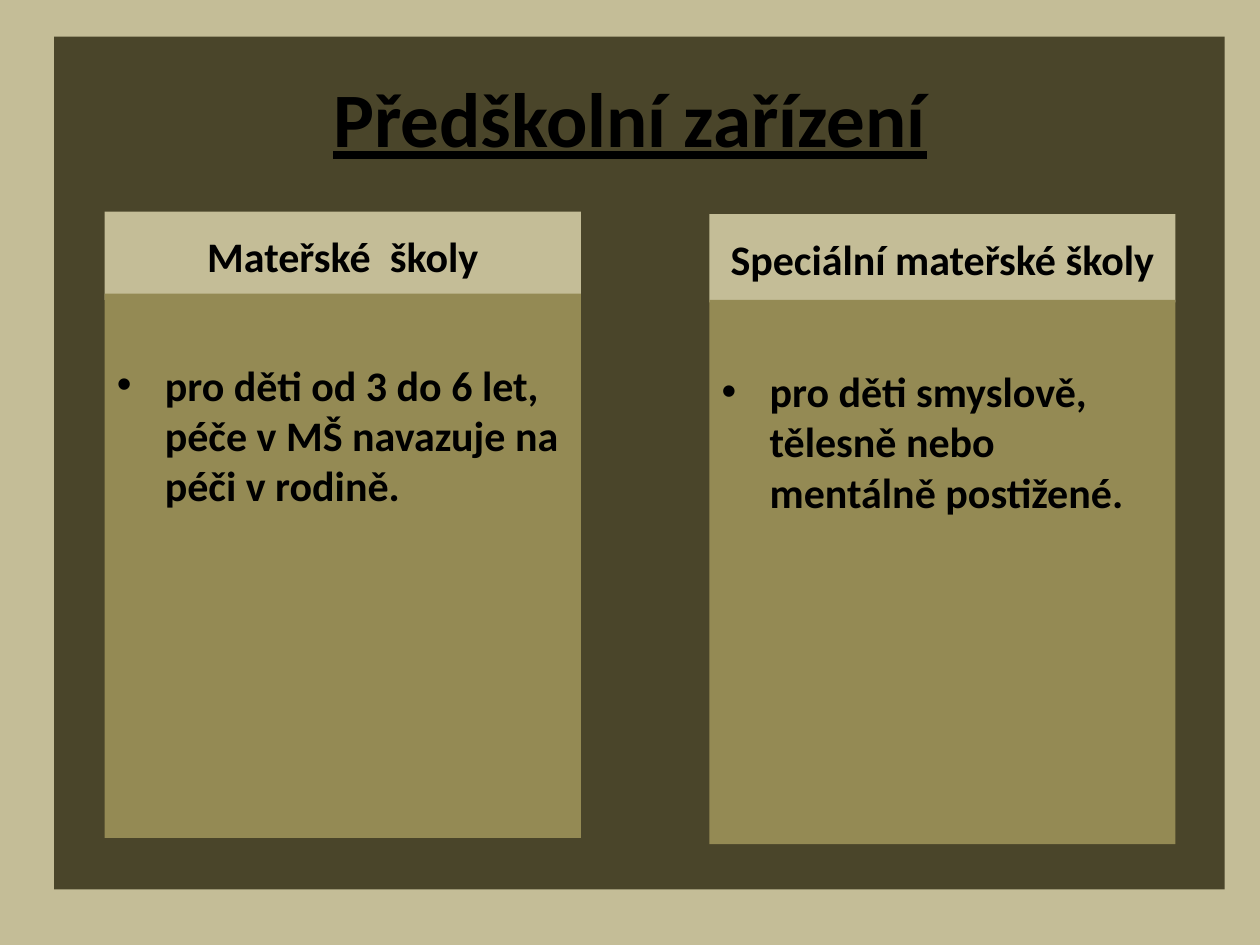
from dataclasses import dataclass

from lxml import etree
from pptx import Presentation
from pptx.dml.color import RGBColor
from pptx.enum.shapes import MSO_SHAPE
from pptx.enum.text import MSO_ANCHOR, PP_ALIGN
from pptx.oxml.ns import qn
from pptx.util import Inches, Pt

RECT = MSO_SHAPE.RECTANGLE
TOP, MIDDLE = MSO_ANCHOR.TOP, MSO_ANCHOR.MIDDLE
LEFT, CENTER = PP_ALIGN.LEFT, PP_ALIGN.CENTER

WIDE, HIGH = 10, 7.5
FONT = "Calibri"
HEAD_H, BODY_H = 0.7, 4.32
INDENT = 0.38
COLORS = {"sand": "C4BD97", "dark": "4A452A", "olive": "948A54", "ink": "000000"}


@dataclass
class Box:
    left: float
    top: float
    width: float
    height: float


@dataclass
class Column:
    left: float
    width: float
    head_top: float
    body_top: float
    head: str
    body: str


COLUMNS = [
    Column(0.83, 3.78, 1.68, 2.33, "Mateřské  školy",
           "pro děti od 3 do 6 let, péče v MŠ navazuje na péči v rodině."),
    Column(5.63, 3.70, 1.70, 2.38, "Speciální mateřské školy",
           "pro děti smyslově, tělesně nebo mentálně postižené."),
]


def color(name: str) -> RGBColor:
    return RGBColor.from_string(COLORS[name])


def lengths(box: Box) -> list:
    return [Inches(n) for n in (box.left, box.top, box.width, box.height)]


def add_panel(slide, box: Box, fill: str):
    panel = slide.shapes.add_shape(RECT, *lengths(box))
    panel.shadow.inherit = False
    panel.fill.solid()
    panel.fill.fore_color.rgb = color(fill)
    panel.line.fill.background()
    return panel


def add_text(shape, text: str, size: int, align=CENTER, anchor=MIDDLE):
    frame = shape.text_frame
    frame.word_wrap = True
    frame.vertical_anchor = anchor
    para = frame.paragraphs[0]
    para.alignment = align
    run = para.add_run()
    run.text = text
    font = run.font
    font.name, font.size, font.bold = FONT, Pt(size), True
    font.color.rgb = color("ink")
    return para


def add_bullet(para) -> None:
    props = para._p.get_or_add_pPr()
    props.set("marL", str(Inches(INDENT)))
    props.set("indent", str(-Inches(INDENT)))
    etree.SubElement(props, qn("a:buFont")).set("typeface", "Arial")
    etree.SubElement(props, qn("a:buChar")).set("char", "•")


def add_column(slide, col: Column) -> None:
    head = add_panel(slide, Box(col.left, col.head_top, col.width, HEAD_H), "sand")
    add_text(head, col.head, 24)
    body = add_panel(slide, Box(col.left, col.body_top, col.width, BODY_H), "olive")
    body.text_frame.margin_top = Inches(0.52)
    add_bullet(add_text(body, col.body, 24, LEFT, TOP))


def main() -> None:
    deck = Presentation()
    deck.slide_width, deck.slide_height = Inches(WIDE), Inches(HIGH)
    slide = deck.slides.add_slide(deck.slide_layouts[6])

    # Background and dark panel
    slide.background.fill.solid()
    slide.background.fill.fore_color.rgb = color("sand")
    add_panel(slide, Box(0.43, 0.29, 9.29, 6.77), "dark")

    # Title, centred across the slide
    title = Box(0.05 * WIDE, 0.04 * HIGH, 0.9 * WIDE, HIGH / 6)
    para = add_text(slide.shapes.add_textbox(*lengths(title)), "Předškolní zařízení", 44)
    para.runs[0].font.underline = True

    # Two columns: heading above body
    for col in COLUMNS:
        add_column(slide, col)

    deck.save("out.pptx")


if __name__ == "__main__":
    main()
